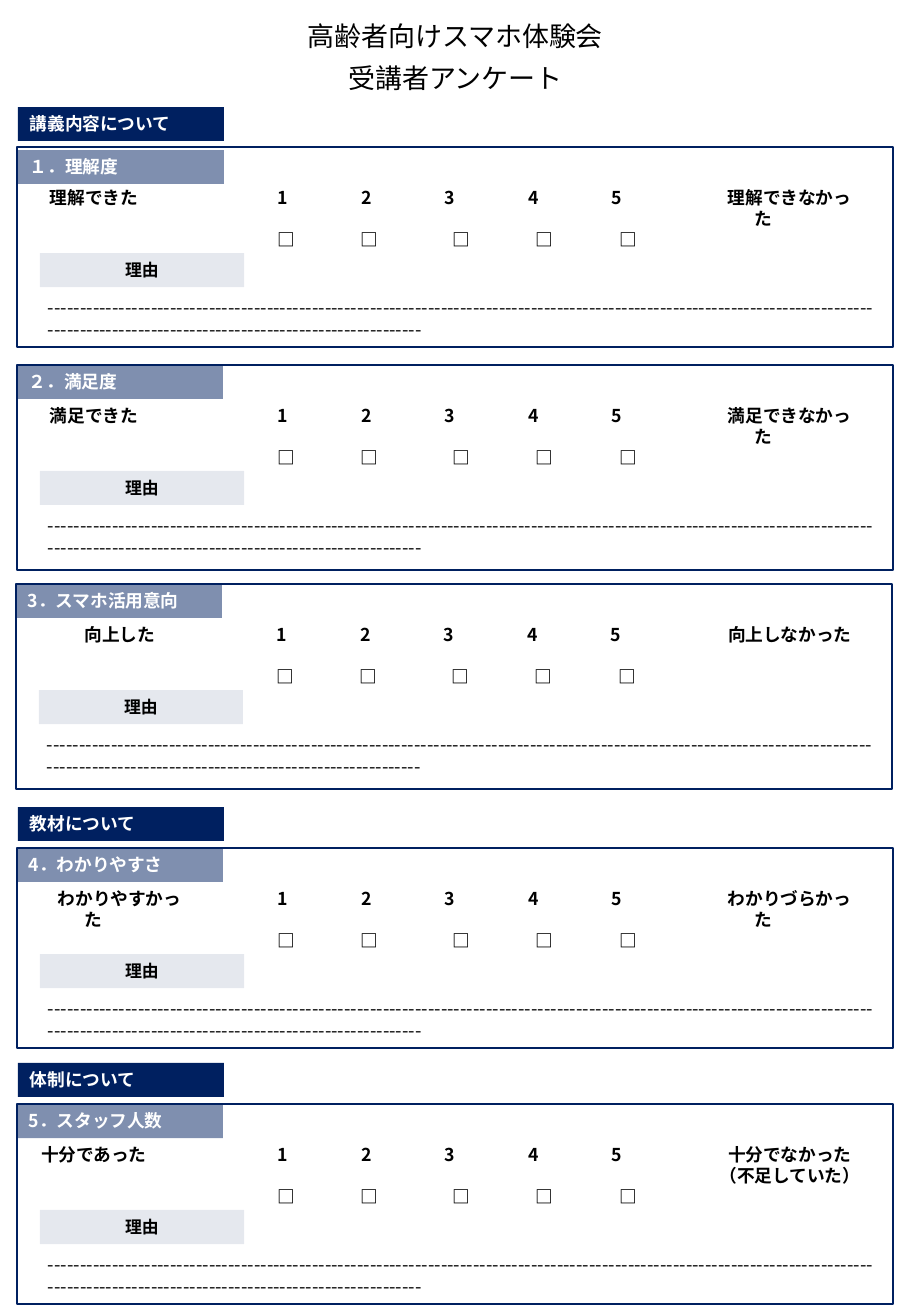
from lxml.etree import SubElement
from pptx import Presentation
from pptx.dml.color import RGBColor
from pptx.enum.shapes import MSO_SHAPE as Shape
from pptx.enum.text import MSO_ANCHOR as Anchor, MSO_AUTO_SIZE as AutoSize, PP_ALIGN as Align
from pptx.oxml.ns import qn
from pptx.util import Pt

TITLE = "高齢者向けスマホ体験会"
SUBTITLE = "受講者アンケート"
REASON = "理由"
ANSWER_LINE = "-" * 186
SCORES = ["1", "2", "3", "4", "5"]
TICK = "□"
SECTIONS = [("講義内容について", 107), ("教材について", 807), ("体制について", 1063)]
# heading, best label, its left edge, worst label, frame left, top, height, heading shift
QUESTIONS = [
    ("１．理解度", "理解できた", 22, "理解できなかった", 17, 147, 200, (1, 3)),
    ("２．満足度", "満足できた", 22, "満足できなかった", 17, 365, 205, (0, 0)),
    ("3．スマホ活用意向", "向上した", 48, "向上しなかった", 16, 584, 205, (0, 0)),
    ("4．わかりやすさ", "わかりやすかった", 48, "わかりづらかった", 17, 848, 200, (0, 0)),
    ("5．スタッフ人数", "十分であった", 22, "十分でなかった\n（不足していた）", 17, 1104, 200, (0, 0)),
]

FONT = "Noto Sans CJK JP"
COLOURS = {"navy": "002060", "white": "FFFFFF", "black": "000000"}
EMU_PER_PX = 914400 / 121.5
WIDTH, HEIGHT = 911, 1316
BAR_W, BAR_H = 206, 34
FRAME_W = 876
LABEL_W, WORST_X = 144, 718
SCORE_X, SCORE_PITCH, SCORE_W = 263, 83.5, 40
TICK_SHIFTS = [3, 3, 11, 11, 11]
LABEL_DY, TICK_DY, REASON_DY, ANSWER_DY = 34, 76, 106, 143
WRAP_LENGTH, WRAP_START, WRAP_HANG = 8, 10, 27

HEADING = {"size": 10.5, "bold": True, "colour": "white"}
CHOICE = {"size": 10.5, "bold": True, "align": Align.CENTER, "margin": 0}
REASON_STYLE = {"size": 10, "bold": True, "align": Align.CENTER, "anchor": Anchor.MIDDLE}
TITLE_STYLE = {"size": 16, "align": Align.CENTER, "anchor": Anchor.MIDDLE, "spacing": 0.9}


def px(length):
    return round(length * EMU_PER_PX)


def box(*lengths):
    return [px(length) for length in lengths]


def rgb(name):
    return RGBColor.from_string(COLOURS[name])


def write(shape, text, size, bold=False, colour="black", align=Align.LEFT,
          anchor=Anchor.TOP, margin=None, spacing=None):
    frame = shape.text_frame
    frame.text = text
    settings = {"word_wrap": True, "auto_size": AutoSize.NONE, "vertical_anchor": anchor}
    if margin is not None:
        settings.update(margin_left=px(margin), margin_right=px(margin))
    for key, value in settings.items():
        setattr(frame, key, value)
    for paragraph in frame.paragraphs:
        paragraph.alignment = align
        paragraph.line_spacing = spacing
        for run in paragraph.runs:
            for key, value in {"name": FONT, "size": Pt(size), "bold": bold}.items():
                setattr(run.font, key, value)
            run.font.color.rgb = rgb(colour)
            SubElement(run.font._element, qn("a:ea"), typeface=FONT)


def add_text(shapes, area, text, **style):
    label = shapes.add_textbox(*box(*area))
    write(label, text, **style)
    return label


def add_panel(shapes, area, opacity=100, kind=Shape.RECTANGLE):
    """Add a navy panel without outline, see-through below 100 opacity."""
    panel = shapes.add_shape(kind, *box(*area))
    panel.shadow.inherit = False
    panel.fill.solid()
    panel.fill.fore_color.rgb = rgb("navy")
    panel.line.fill.background()
    if opacity < 100:
        colour = panel._element.spPr.find(qn("a:solidFill"))[0]
        SubElement(colour, qn("a:alpha"), val=str(opacity * 1000))
    return panel


def add_label(shapes, x, y, text):
    """Add a scale-end label; a long one wraps with a hanging indent."""
    wraps = len(text) == WRAP_LENGTH
    align = Align.LEFT if wraps else Align.CENTER
    label = add_text(shapes, (x, y, LABEL_W, BAR_H), text, **{**CHOICE, "align": align})
    if wraps:
        properties = label.text_frame.paragraphs[0]._p.get_or_add_pPr()
        properties.set("marL", str(px(WRAP_START + WRAP_HANG)))
        properties.set("indent", str(-px(WRAP_HANG)))


def add_question(shapes, heading, best, best_x, worst, x, y, height, shift):
    border = shapes.add_shape(Shape.RECTANGLE, *box(x, y, FRAME_W, height))
    border.shadow.inherit = False
    border.fill.background()
    border.line.color.rgb = rgb("navy")
    border.line.width = Pt(1)

    dx, dy = shift
    write(add_panel(shapes, (x + dx, y + dy, BAR_W, BAR_H), 50), heading, **HEADING)
    reason = add_panel(shapes, (x + 23, y + REASON_DY, 204, BAR_H), 10, Shape.PENTAGON)
    reason.adjustments[0] = 0
    write(reason, REASON, **REASON_STYLE)
    add_text(shapes, (x + 19, y + ANSWER_DY, 853, 57), ANSWER_LINE, size=11)

    scale = shapes.add_group_shape().shapes
    add_label(scale, best_x, y + LABEL_DY, best)
    add_label(scale, WORST_X, y + LABEL_DY, worst)
    for index, (score, tick_shift) in enumerate(zip(SCORES, TICK_SHIFTS)):
        score_x = x - 17 + SCORE_X + index * SCORE_PITCH
        add_text(scale, (score_x, y + LABEL_DY, SCORE_W, BAR_H), score, **CHOICE)
        add_text(scale, (score_x + tick_shift, y + TICK_DY, SCORE_W, BAR_H), TICK, **CHOICE)


def main():
    deck = Presentation()
    deck.slide_width, deck.slide_height = box(WIDTH, HEIGHT)
    slide = deck.slides.add_slide(deck.slide_layouts[5])
    shapes = slide.shapes

    title = shapes.title
    title.left, title.top, title.width, title.height = box(0, 0, WIDTH, 75)
    write(title, TITLE, **TITLE_STYLE)
    add_text(shapes, (0, 62, WIDTH, 36), SUBTITLE, **TITLE_STYLE)

    for name, y in SECTIONS:
        write(add_panel(shapes, (18, y, BAR_W, BAR_H)), name, **HEADING)
    for question in QUESTIONS:
        add_question(shapes, *question)
    deck.save("out.pptx")


if __name__ == "__main__":
    main()
